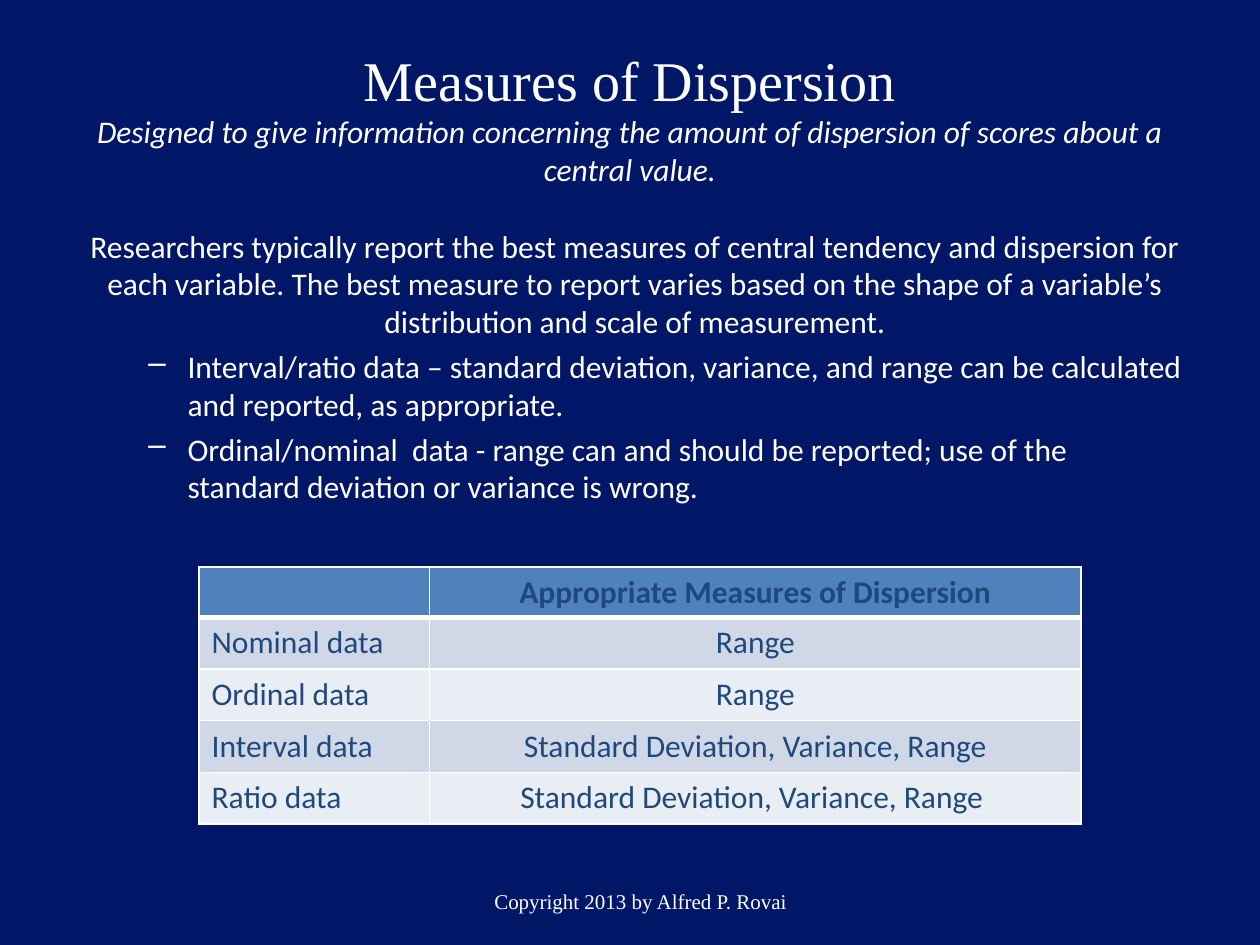
import dataclasses

import lxml.etree
import pptx
import pptx.dml.color
import pptx.enum.text
import pptx.oxml.ns
import pptx.util

Inches = pptx.util.Inches
Pt = pptx.util.Pt
ALIGN = pptx.enum.text.PP_ALIGN
ANCHOR = pptx.enum.text.MSO_ANCHOR
qn = pptx.oxml.ns.qn


@dataclasses.dataclass(frozen=True)
class Theme:
    background: str = "001667"
    light: str = "FFFFFF"
    table_text: str = "1F497D"
    header_fill: str = "4F81BD"
    bands: tuple[str, str] = ("D0D8E8", "E9EDF4")
    serif: str = "Times New Roman"
    sans: str = "Calibri"
    title_size: int = 32
    body_size: int = 18
    footer_size: int = 12
    thin: int = 1
    thick: int = 3


@dataclasses.dataclass(frozen=True)
class Box:
    left: float
    top: float
    width: float
    height: float

    def lengths(self) -> tuple:
        return tuple(Inches(v) for v in dataclasses.astuple(self))


@dataclasses.dataclass(frozen=True)
class Measure:
    scale: str
    statistics: str


THEME = Theme()
TITLE_BOX = Box(0.5, 0.3, 9, 1.25)
BODY_BOX = Box(0.58, 1.75, 8.92, 5.17)
TABLE_BOX = Box(1.58, 4.5, 7, 2.04)
FOOTER_BOX = Box(1.75, 6.95, 6.67, 0.4)
COLUMNS = (1.83, 5.17)
HEADER_HEIGHT, ROW_HEIGHT = 0.4, 0.41

INTRO = (
    "Researchers typically report the best measures of central tendency and "
    "dispersion for each variable. The best measure to report varies based on "
    "the shape of a variable’s distribution and scale of measurement."
)
GUIDELINES = (
    "Interval/ratio data – standard deviation, variance, and range can be "
    "calculated and reported, as appropriate.",
    "Ordinal/nominal  data - range can and should be reported; use of the "
    "standard deviation or variance is wrong.",
)
MEASURES = (
    Measure("Nominal data", "Range"),
    Measure("Ordinal data", "Range"),
    Measure("Interval data", "Standard Deviation, Variance, Range"),
    Measure("Ratio data", "Standard Deviation, Variance, Range "),
)


def rgb(color: str) -> pptx.dml.color.RGBColor:
    return pptx.dml.color.RGBColor.from_string(color)


def add_run(p, text: str, size: int = THEME.body_size, font: str = THEME.sans,
            color: str = THEME.light, bold: bool = False, italic: bool = False) -> None:
    r = p.add_run()
    r.text = text
    r.font.size, r.font.name = Pt(size), font
    r.font.bold, r.font.italic = bold, italic
    r.font.color.rgb = rgb(color)


def set_dash_bullet(p) -> None:
    p.level = 1
    p_pr = p._p.get_or_add_pPr()
    p_pr.set("marL", str(Inches(0.81)))
    p_pr.set("indent", str(Inches(-0.31)))
    lxml.etree.SubElement(p_pr, qn("a:buChar"), char="–")


def set_borders(cell, top: int, bottom: int) -> None:
    """Border lines come before the fill in the cell properties."""
    tc_pr = cell._tc.get_or_add_tcPr()
    widths = {"L": THEME.thin, "R": THEME.thin, "T": top, "B": bottom}
    for i, (side, width) in enumerate(widths.items()):
        ln = lxml.etree.Element(qn(f"a:ln{side}"), w=str(Pt(width)))
        fill = lxml.etree.SubElement(ln, qn("a:solidFill"))
        lxml.etree.SubElement(fill, qn("a:srgbClr"), val=THEME.light)
        tc_pr.insert(i, ln)


def add_title(s) -> None:
    sp = s.shapes.title
    sp.left, sp.top, sp.width, sp.height = TITLE_BOX.lengths()
    tf = sp.text_frame
    tf.auto_size = pptx.enum.text.MSO_AUTO_SIZE.NONE
    tf.vertical_anchor = ANCHOR.MIDDLE
    p = tf.paragraphs[0]
    p.alignment = ALIGN.CENTER
    add_run(p, "Measures of Dispersion", THEME.title_size, THEME.serif)
    p.add_line_break()
    add_run(p, "Designed to give information concerning the amount of dispersion "
               "of scores about a central value.", italic=True)


def add_text_box(s, box: Box, anchor):
    tf = s.shapes.add_textbox(*box.lengths()).text_frame
    tf.word_wrap = True
    tf.vertical_anchor = anchor
    return tf


def add_body(s) -> None:
    tf = add_text_box(s, BODY_BOX, ANCHOR.TOP)
    p = tf.paragraphs[0]
    p.alignment = ALIGN.CENTER
    p.space_before = Pt(4)
    add_run(p, INTRO)
    for guideline in GUIDELINES:
        p = tf.add_paragraph()
        p.space_before = Pt(4)
        set_dash_bullet(p)
        add_run(p, guideline)


def add_measures_table(s) -> None:
    rows = [Measure("", "Appropriate Measures of Dispersion"), *MEASURES]
    table = s.shapes.add_table(len(rows), len(COLUMNS), *TABLE_BOX.lengths()).table
    for column, width in zip(table.columns, COLUMNS):
        column.width = Inches(width)
    for i, measure in enumerate(rows):
        header = i == 0
        table.rows[i].height = Inches(HEADER_HEIGHT if header else ROW_HEIGHT)
        for j, text in enumerate(dataclasses.astuple(measure)):
            cell = table.cell(i, j)
            cell.fill.solid()
            cell.fill.fore_color.rgb = rgb(
                THEME.header_fill if header else THEME.bands[(i - 1) % 2])
            set_borders(cell, top=THEME.thick if i == 1 else THEME.thin,
                        bottom=THEME.thick if header else THEME.thin)
            p = cell.text_frame.paragraphs[0]
            p.alignment = ALIGN.CENTER if j else ALIGN.LEFT
            if text:
                add_run(p, text, color=THEME.table_text, bold=header)


def add_footer(s) -> None:
    p = add_text_box(s, FOOTER_BOX, ANCHOR.MIDDLE).paragraphs[0]
    p.alignment = ALIGN.CENTER
    add_run(p, "Copyright 2013 by Alfred P. Rovai", THEME.footer_size, THEME.serif)


def main() -> None:
    prs = pptx.Presentation()
    prs.slide_width, prs.slide_height = Inches(10), Inches(7.5)
    s = prs.slides.add_slide(prs.slide_layouts.get_by_name("Title Only"))
    s.background.fill.solid()
    s.background.fill.fore_color.rgb = rgb(THEME.background)
    # Text above, table and footer below
    add_title(s)
    add_body(s)
    add_measures_table(s)
    add_footer(s)
    prs.save("out.pptx")


if __name__ == "__main__":
    main()
